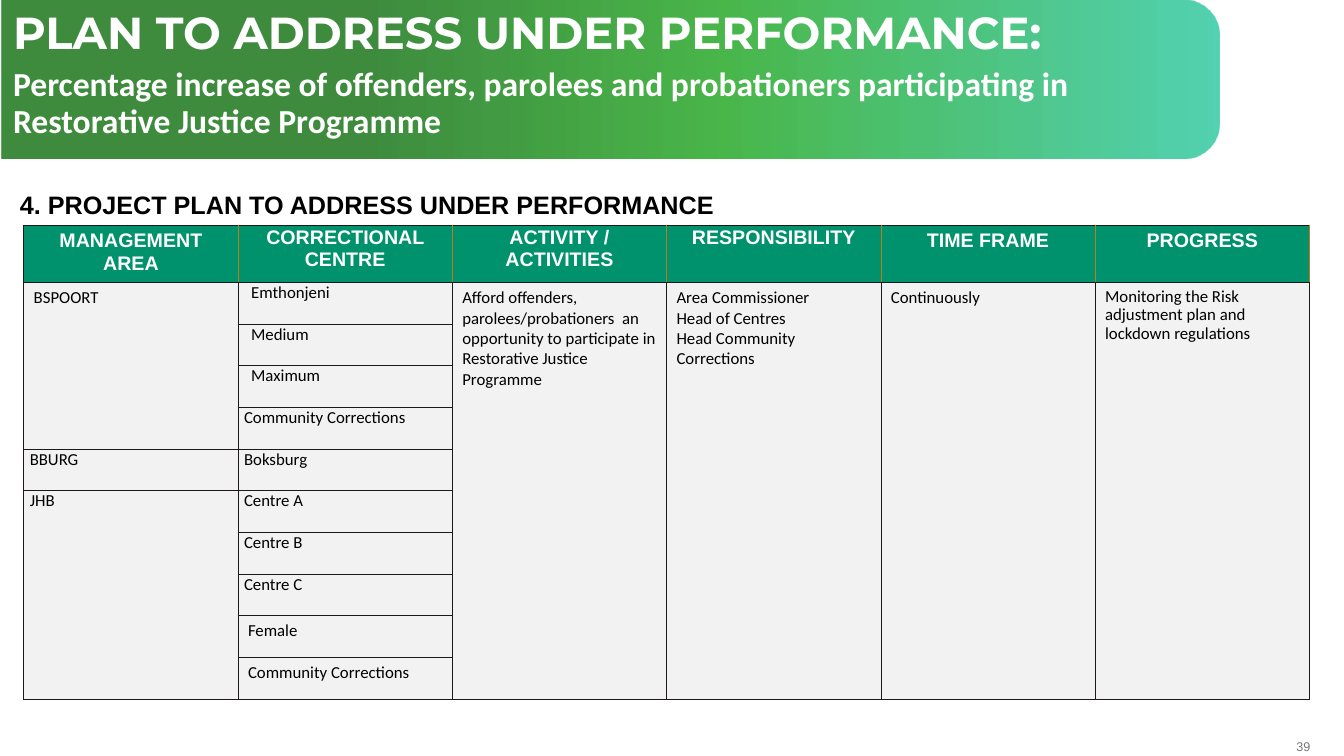
from lxml.etree import SubElement
from pptx import Presentation
from pptx.dml.color import RGBColor
from pptx.enum.shapes import MSO_SHAPE
from pptx.enum.text import MSO_ANCHOR, PP_ALIGN
from pptx.oxml import parse_xml
from pptx.oxml.ns import nsdecls, qn
from pptx.util import Cm, Pt

WHITE, BLACK, GREY = "FFFFFF", "000000", "77787B"
HEADER_FILL, BODY_FILL = "00926C", "F2F2F2"
DARK_RULE, ORANGE_RULE = "1E1918", "BF7B17"

# Cell margins in cm: left, top, right, bottom
NORMAL = (0.25, 0.13, 0.25, 0.13)
TIGHT = (0.03, 0.03, 0.03, 0)
FLUSH = (0.15, 0, 0, 0)
INDENTED = (0.33, 0, 0, 0)

HEADERS = [
    ("MANAGEMENT AREA", NORMAL),
    ("CORRECTIONAL CENTRE", TIGHT),
    ("ACTIVITY / ACTIVITIES", TIGHT),
    ("RESPONSIBILITY", TIGHT),
    ("TIME FRAME", NORMAL),
    ("PROGRESS", NORMAL),
]
# Management area, its margins, and its centres with theirs
AREAS = [
    ("BSPOORT", NORMAL, [("Emthonjeni", INDENTED), ("Medium", INDENTED),
                         ("Maximum", INDENTED), ("Community Corrections", FLUSH)]),
    ("BBURG", FLUSH, [("Boksburg", FLUSH)]),
    ("JHB", FLUSH, [("Centre A", FLUSH), ("Centre B", FLUSH), ("Centre C", FLUSH),
                    ("Female", NORMAL), ("Community Corrections", NORMAL)]),
]
SHARED_PLAN = [
    "Afford offenders, parolees/probationers  an opportunity to participate in "
    "Restorative Justice Programme",
    "Area Commissioner\nHead of Centres\nHead Community Corrections",
    "Continuously",
    "Monitoring the Risk adjustment plan and lockdown regulations",
]
BAND_STOPS = [(30, "006600", 75), (59, "009900", 71), (100, "00BC8D", 67)]


def rgb(color):
    return RGBColor.from_string(color)


def style(paragraph, font, size, color, bold=False, align=None):
    paragraph.alignment = align
    for run in paragraph.runs:
        run.font.name = font
        run.font.size = Pt(size)
        run.font.bold = bold
        run.font.color.rgb = rgb(color)


def add_text(slide, left, top, width, height, text):
    frame = slide.shapes.add_textbox(Cm(left), Cm(top), Cm(width), Cm(height)).text_frame
    frame.word_wrap = True
    frame.text = text
    return frame


def add_title_band(slide):
    """Add the gradient band, a shape turned so its round corners face right."""
    length, thickness = 30.7, 4
    band = slide.shapes.add_shape(
        MSO_SHAPE.ROUND_2_SAME_RECTANGLE,
        Cm(0.03 + (length - thickness) / 2), Cm((thickness - length) / 2),
        Cm(thickness), Cm(length))
    band.rotation = 90
    band.adjustments[0] = 0.23
    band.shadow.inherit = False
    band.line.fill.background()
    stops = "".join(
        f'<a:gs pos="{position * 1000}"><a:srgbClr val="{color}">'
        f'<a:alpha val="{opacity * 1000}"/></a:srgbClr></a:gs>'
        for position, color, opacity in BAND_STOPS)
    gradient = parse_xml(
        f'<a:gradFill rotWithShape="1" {nsdecls("a")}><a:gsLst>{stops}</a:gsLst>'
        '<a:lin ang="16200000" scaled="0"/></a:gradFill>')
    band._element.spPr.find(qn("a:prstGeom")).addnext(gradient)


def add_title(slide):
    frame = add_text(
        slide, 0.08, 0.15, 30.4, 1.45,
        "PLAN TO ADDRESS UNDER PERFORMANCE:\n"
        "Percentage increase of offenders, parolees and probationers participating in "
        "Restorative Justice Programme")
    title, subtitle = frame.paragraphs
    style(title, "Montserrat", 32, WHITE, bold=True)
    style(subtitle, "Calibri", 24, WHITE, bold=True)
    title.line_spacing = subtitle.line_spacing = 0.9
    title.space_after = Pt(6)


def set_borders(cell, left, right):
    properties = cell._tc.get_or_add_tcPr()
    sides = {"L": left, "R": right, "T": DARK_RULE, "B": DARK_RULE}
    for side, color in sides.items():
        line = SubElement(properties, qn(f"a:ln{side}"), w=str(Pt(0.5)))
        SubElement(SubElement(line, qn("a:solidFill")), qn("a:srgbClr"), val=color)


def fill_cell(cell, text, margins):
    cell.margin_left, cell.margin_top, cell.margin_right, cell.margin_bottom = map(Cm, margins)
    cell.text_frame.text = text


def fill_header(table):
    for column, (text, margins) in enumerate(HEADERS):
        cell = table.cell(0, column)
        fill_cell(cell, text, margins)
        style(cell.text_frame.paragraphs[0], "Arial", 14, WHITE, True, PP_ALIGN.CENTER)


def fill_body(table):
    last_row = len(table.rows) - 1
    row = 1
    for area, area_margins, centres in AREAS:
        table.cell(row, 0).merge(table.cell(row + len(centres) - 1, 0))
        fill_cell(table.cell(row, 0), area, area_margins)
        for centre, margins in centres:
            fill_cell(table.cell(row, 1), centre, margins)
            row += 1
    for column, text in enumerate(SHARED_PLAN, start=2):
        table.cell(1, column).merge(table.cell(last_row, column))
        fill_cell(table.cell(1, column), text, NORMAL)
    for row in range(1, last_row + 1):
        for column in range(len(HEADERS)):
            for paragraph in table.cell(row, column).text_frame.paragraphs:
                style(paragraph, "Calibri", 12, BLACK)
    progress = table.cell(1, len(HEADERS) - 1)
    progress.text_frame.paragraphs[0].line_spacing = 0.9


def add_plan_table(slide):
    row_count = 1 + sum(len(centres) for _, _, centres in AREAS)
    column_count = len(HEADERS)
    table = slide.shapes.add_table(
        row_count, column_count, Cm(0.6), Cm(5.67), Cm(32.4), Cm(11.86)).table
    table.first_row = table.horz_banding = False
    for column in table.columns:
        column.width = Cm(5.4)
    for row in table.rows:
        row.height = Cm(1.05)
    for row in range(row_count):
        for column in range(column_count):
            cell = table.cell(row, column)
            is_header = row == 0
            set_borders(cell,
                        ORANGE_RULE if is_header and column else DARK_RULE,
                        ORANGE_RULE if is_header and column else DARK_RULE)
            cell.fill.solid()
            cell.fill.fore_color.rgb = rgb(HEADER_FILL if is_header else BODY_FILL)
    fill_header(table)
    fill_body(table)


def add_page_number(slide):
    frame = add_text(slide, 32.03, 18.62, 0.99, 0.38, "39")
    frame.margin_left = frame.margin_top = frame.margin_right = frame.margin_bottom = 0
    frame.vertical_anchor = MSO_ANCHOR.MIDDLE
    style(frame.paragraphs[0], "Arial", 9, GREY, align=PP_ALIGN.RIGHT)


def main():
    presentation = Presentation()
    presentation.slide_width, presentation.slide_height = Cm(33.87), Cm(19.05)
    slide = presentation.slides.add_slide(presentation.slide_layouts[6])
    add_page_number(slide)
    add_title_band(slide)
    heading = add_text(slide, 0.25, 4.65, 24.5, 1.03,
                       "4. PROJECT PLAN TO ADDRESS UNDER PERFORMANCE")
    style(heading.paragraphs[0], "Arial", 18, BLACK, bold=True)
    add_plan_table(slide)
    add_title(slide)
    presentation.save("out.pptx")


if __name__ == "__main__":
    main()
